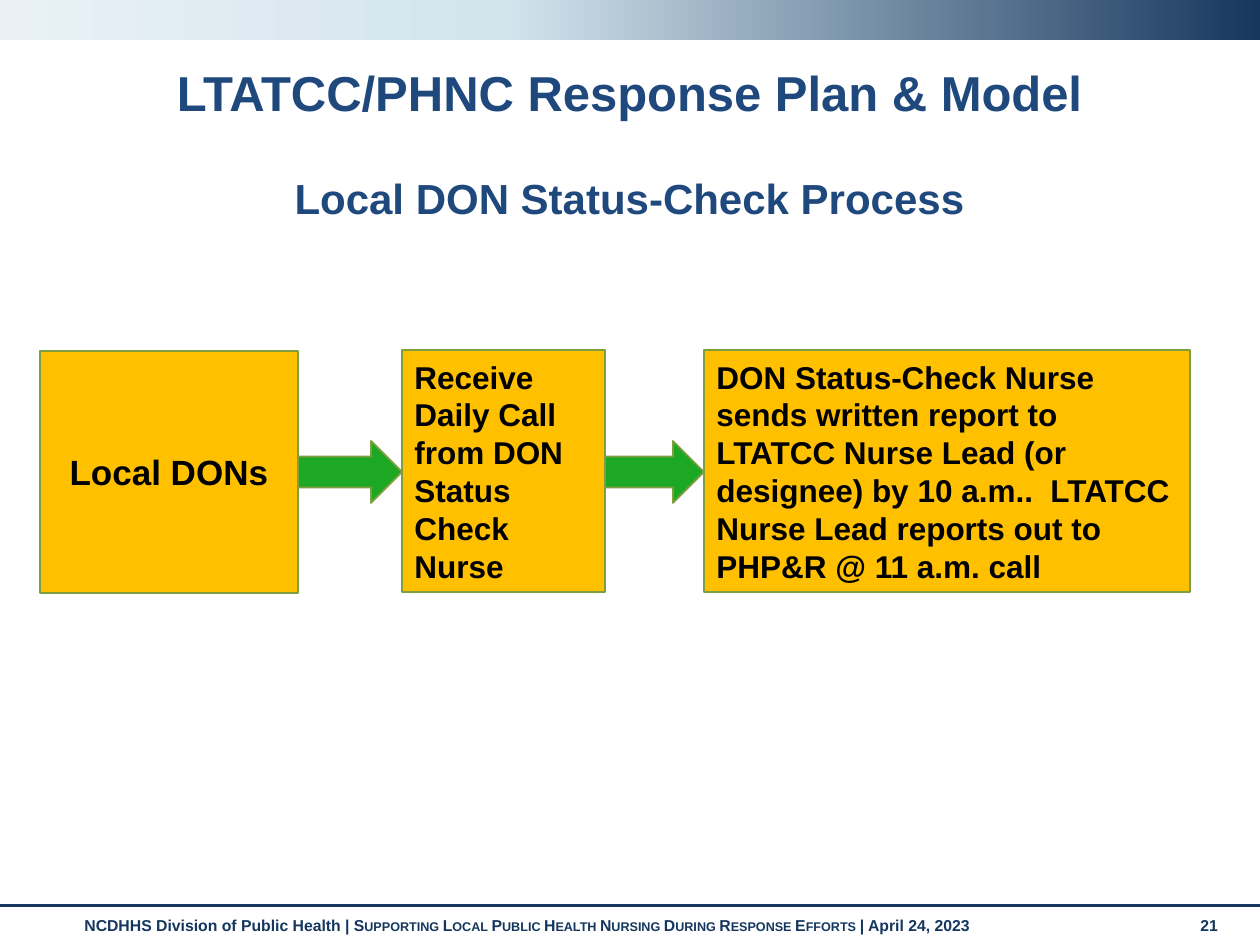
"""Build the Local DON status-check process slide."""
from copy import deepcopy

from pptx import Presentation
from pptx.dml.color import RGBColor
from pptx.enum.shapes import MSO_CONNECTOR, MSO_SHAPE
from pptx.enum.text import MSO_ANCHOR, PP_ALIGN
from pptx.oxml import parse_xml
from pptx.util import Emu, Pt

NAVY = RGBColor(0x17, 0x37, 0x5E)
PALE_BLUE = RGBColor(0xD3, 0xE4, 0xED)
ICE = RGBColor(0xE9, 0xF1, 0xF6)
FOOTER_BLUE = RGBColor(0x15, 0x36, 0x5E)
TITLE_BLUE = RGBColor(0x1F, 0x49, 0x7D)
AMBER = RGBColor(0xFF, 0xC0, 0x00)
GREEN = RGBColor(0x1C, 0xA8, 0x23)
OLIVE = RGBColor(0x7F, 0x9E, 0x3F)
BLACK = RGBColor(0x00, 0x00, 0x00)
EMU_PER_PX = 914400 / 126


def px(*lengths):
    return [Emu(round(length * EMU_PER_PX)) for length in lengths]


def add_run(paragraph, text, *, size, color, align=PP_ALIGN.LEFT, small_caps=False):
    paragraph.alignment = align
    run = paragraph.add_run()
    run.text = text
    run.font.name = "Arial"
    run.font.size = Pt(size)
    run.font.bold = True
    run.font.color.rgb = color
    if small_caps:
        run.font._element.set("cap", "small")


prs = Presentation()
prs.slide_width, prs.slide_height = px(1260, 945)
slide = prs.slides.add_slide(prs.slide_layouts[6])
shapes = slide.shapes

banner = shapes.add_shape(MSO_SHAPE.RECTANGLE, *px(0, 0, 1260, 40))
banner.shadow.inherit = False
banner.line.fill.background()
banner.fill.gradient()
banner.fill.gradient_angle = 180
stop_list = banner._element.spPr.xpath(".//a:gsLst")[0]
stop_list.append(deepcopy(stop_list[0]))
banner_stops = [(0, NAVY), (0.6, PALE_BLUE), (1, ICE)]
for stop, (position, color) in zip(banner.fill.gradient_stops, banner_stops):
    stop.position = position
    stop.color.rgb = color

footer_rule = shapes.add_connector(MSO_CONNECTOR.STRAIGHT, *px(0, 906, 1260, 906))
footer_rule.line.color.rgb = NAVY
footer_rule.line.width = Pt(1.75)
footer_rule._element.spPr.append(parse_xml(
    '<a:effectLst xmlns:a="http://schemas.openxmlformats.org/drawingml/2006/main"/>'))

footer = shapes.add_textbox(*px(72, 910, 1101, 38)).text_frame
footer.word_wrap = True
for text, small_caps in [
    ("NCDHHS Division of Public Health | ", False),
    ("Supporting Local Public Health Nursing During Response Efforts ", True),
    ("| April 24, 2023", False),
]:
    add_run(footer.paragraphs[0], text, size=9, color=FOOTER_BLUE, small_caps=small_caps)

page_number = shapes.add_textbox(*px(1188, 910, 55, 38)).text_frame
page_number.word_wrap = True
add_run(page_number.paragraphs[0], "21", size=9, color=FOOTER_BLUE)

heading = shapes.add_textbox(*px(89, 63, 1081, 170)).text_frame
heading.word_wrap = True
title, subtitle = heading.paragraphs[0], heading.add_paragraph()
title.line_spacing = subtitle.line_spacing = 0.9
subtitle.space_before = Pt(32)
add_run(title, "LTATCC/PHNC Response Plan & Model",
        size=28, color=TITLE_BLUE, align=PP_ALIGN.CENTER)
add_run(subtitle, "Local DON Status-Check Process",
        size=24, color=TITLE_BLUE, align=PP_ALIGN.CENTER)

steps = [
    (40, 351, 258, "Local DONs", 20, PP_ALIGN.CENTER),
    (402, 350, 203, "Receive Daily Call from DON Status Check Nurse", 18, PP_ALIGN.LEFT),
    (704, 350, 486, "DON Status-Check Nurse sends written report to LTATCC Nurse Lead "
     "(or designee) by 10 a.m..  LTATCC Nurse Lead reports out to PHP&R @ 11 a.m. call",
     18, PP_ALIGN.LEFT),
]
for left, top, width, text, size, align in steps:
    step = shapes.add_shape(MSO_SHAPE.RECTANGLE, *px(left, top, width, 242))
    step.shadow.inherit = False
    step.fill.solid()
    step.fill.fore_color.rgb = AMBER
    step.line.color.rgb = OLIVE
    step.line.width = Pt(0.75)
    step.text_frame.word_wrap = True
    step.text_frame.vertical_anchor = MSO_ANCHOR.MIDDLE
    add_run(step.text_frame.paragraphs[0], text, size=size, color=BLACK, align=align)

for (left, _, width, *_), (next_left, *_) in zip(steps, steps[1:]):
    start = left + width
    arrow = shapes.add_shape(MSO_SHAPE.RIGHT_ARROW, *px(start, 441, next_left - start, 62))
    arrow.shadow.inherit = False
    arrow.fill.solid()
    arrow.fill.fore_color.rgb = GREEN
    arrow.line.color.rgb = OLIVE
    arrow.line.width = Pt(1)

prs.save("out.pptx")
